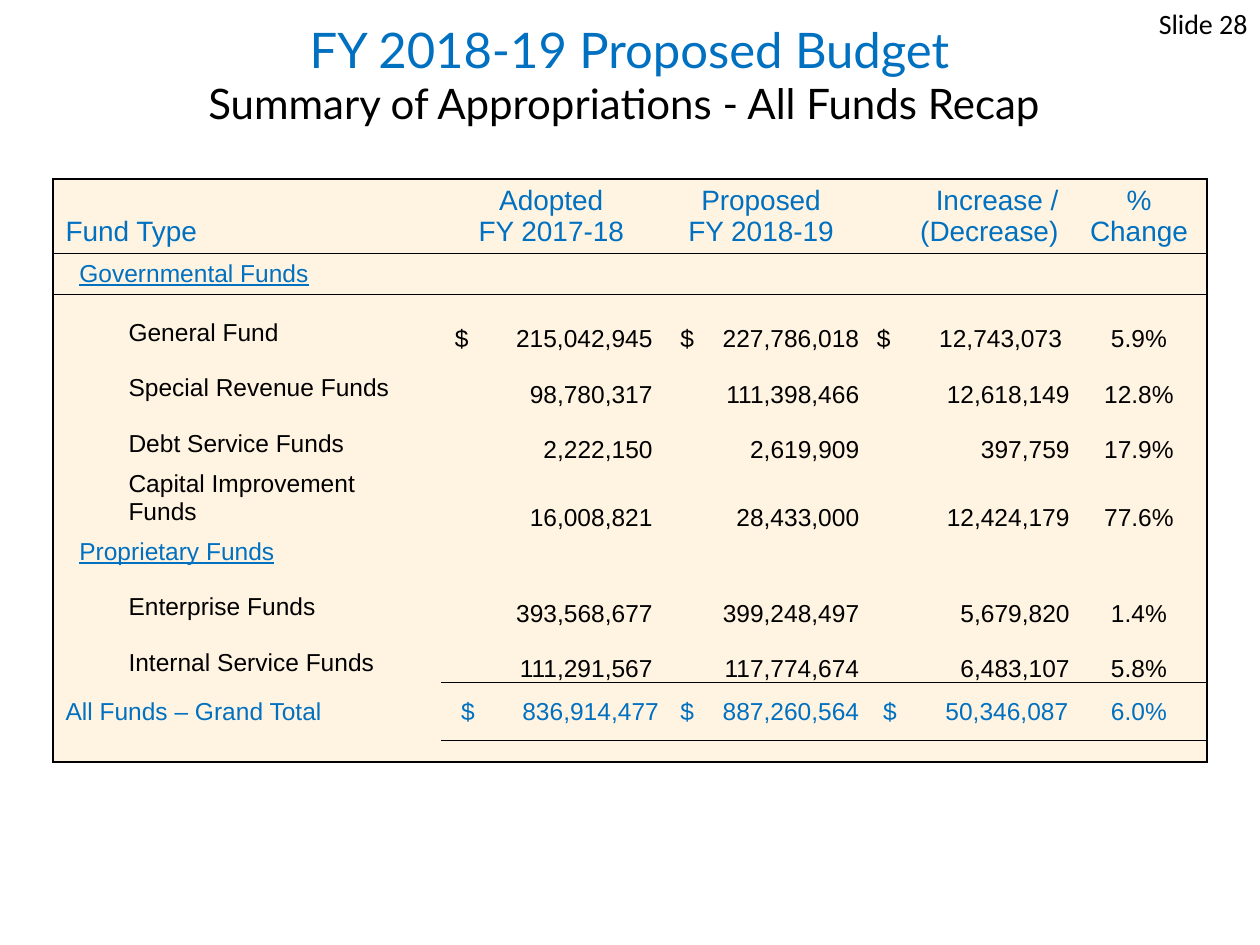
"""Build the proposed budget slide with the all funds recap table."""
from lxml import etree
from pptx import Presentation
from pptx.dml.color import RGBColor
from pptx.enum.text import MSO_ANCHOR, MSO_AUTO_SIZE, PP_ALIGN
from pptx.oxml.ns import qn
from pptx.util import Inches, Pt

LEFT, CENTER, RIGHT = PP_ALIGN.LEFT, PP_ALIGN.CENTER, PP_ALIGN.RIGHT
BOTTOM, MIDDLE = MSO_ANCHOR.BOTTOM, MSO_ANCHOR.MIDDLE
BLUE, BLACK, CREAM = "0070C0", "000000", "FFF3E1"
NO_STYLE = "{2D5ABB26-0587-4C30-8999-92F81FD0307C}"

COLUMN_WIDTHS = [0.5, 2.58, 1.75, 1.58, 1.67, 1.08]
ROW_HEIGHTS = [0.42, 0.25, 0.47, 0.44, 0.44, 0.44, 0.18, 0.44, 0.44, 0.46, 0.17]
HEADER, TOTAL, LAST = 0, 9, 10
SECTIONS = [1, 6]
MERGED = [HEADER, *SECTIONS, TOTAL, LAST]
ROWS = [
    ["Fund Type", "", "Adopted\nFY 2017-18", "Proposed\nFY 2018-19", "Increase / (Decrease)", "%\nChange"],
    ["Governmental Funds", "", "", "", "", ""],
    ["", "General Fund", "$\t215,042,945", "$\t227,786,018", "$\t12,743,073", "5.9%"],
    ["", "Special Revenue Funds", "98,780,317", "111,398,466", "12,618,149", "12.8%"],
    ["", "Debt Service Funds", "2,222,150", "2,619,909", "397,759", "17.9%"],
    ["", "Capital Improvement Funds", "16,008,821", "28,433,000", "12,424,179", "77.6%"],
    ["Proprietary Funds", "", "", "", "", ""],
    ["", "Enterprise Funds", "393,568,677", "399,248,497", "5,679,820", "1.4%"],
    ["", "Internal Service Funds", "111,291,567", "117,774,674", "6,483,107", "5.8%"],
    ["All Funds – Grand Total", "", "$\t836,914,477", "$\t887,260,564", "$\t50,346,087", "6.0%"],
    ["", "", "", "", "", ""],
]
DOLLAR_TABS = {2: 1.57, 3: 1.42, 4: 1.47}
DOLLAR_MARGINS = {2: 0.11, 3: 0.15, 4: 0.13}


def color(value):
    return RGBColor.from_string(value)


def add_border(cell, side, width):
    line = etree.SubElement(cell._tc.get_or_add_tcPr(), qn(f"a:ln{side}"), w=str(Pt(width)))
    fill = etree.SubElement(line, qn("a:solidFill"))
    etree.SubElement(fill, qn("a:srgbClr"), val=BLACK)


presentation = Presentation()
presentation.slide_width, presentation.slide_height = Inches(10), Inches(7.5)
slide = presentation.slides.add_slide(presentation.slide_layouts[5])

title = slide.shapes.title
title.left, title.top, title.width, title.height = Inches(0.33), Inches(0.25), Inches(9.33), Inches(0.67)
title.text_frame.auto_size = MSO_AUTO_SIZE.NONE
title.text_frame.vertical_anchor = MIDDLE
paragraph = title.text_frame.paragraphs[0]
paragraph.alignment = CENTER
for text, size, tint in [("FY 2018-19 Proposed Budget", 28, BLUE),
                         ("Summary of Appropriations - All Funds Recap ", 24, BLACK)]:
    if paragraph.runs:
        paragraph.add_line_break()
    run = paragraph.add_run()
    run.text = text
    run.font.name, run.font.size, run.font.color.rgb = "Lato", Pt(size), color(tint)

table = slide.shapes.add_table(len(ROW_HEIGHTS), len(COLUMN_WIDTHS), Inches(0.42), Inches(1.42),
                               Inches(sum(COLUMN_WIDTHS)), Inches(sum(ROW_HEIGHTS))).table
table.first_row = table.horz_banding = False
table._tbl.tblPr.find(qn("a:tableStyleId")).text = NO_STYLE
for column, width in zip(table.columns, COLUMN_WIDTHS):
    column.width = Inches(width)
for row, height in zip(table.rows, ROW_HEIGHTS):
    row.height = Inches(height)
for row_index in MERGED:
    table.cell(row_index, 0).merge(table.cell(row_index, 1))

for row_index, texts in enumerate(ROWS):
    for column_index, text in enumerate(texts):
        cell = table.cell(row_index, column_index)
        is_amount = column_index >= 2
        thin_below = [HEADER, TOTAL - 1, TOTAL] if is_amount else [HEADER]
        if column_index == 0:
            add_border(cell, "L", 1)
        if column_index == 5:
            add_border(cell, "R", 1)
        if row_index == HEADER or row_index - 1 in thin_below:
            add_border(cell, "T", 1 if row_index == HEADER else 0.5)
        if row_index == LAST or row_index in thin_below:
            add_border(cell, "B", 1 if row_index == LAST else 0.5)
        cell.fill.solid()
        cell.fill.fore_color.rgb = color(CREAM)
        cell.vertical_anchor = MIDDLE if row_index == TOTAL else BOTTOM
        if not text:
            cell.margin_top = cell.margin_bottom = 0
            etree.SubElement(cell.text_frame.paragraphs[0]._p, qn("a:endParaRPr"), sz="600")
            continue

        cell.text = text
        alignment = LEFT
        if is_amount:
            alignment = RIGHT if column_index == 4 else CENTER
        if row_index in SECTIONS:
            cell.margin_left = Inches(0.21)
        if is_amount and row_index != HEADER:
            cell.margin_left = cell.margin_right = cell.margin_top = Inches(0.01)
            cell.margin_bottom = 0
            if "\t" in text:
                alignment = LEFT
                shift = 0.05 if row_index == TOTAL and column_index != 3 else 0
                cell.margin_left = Inches(DOLLAR_MARGINS[column_index] + shift)
                cell.margin_right = 0
                properties = cell.text_frame.paragraphs[0]._p.get_or_add_pPr()
                tabs = etree.SubElement(properties, qn("a:tabLst"))
                etree.SubElement(tabs, qn("a:tab"), pos=str(Inches(DOLLAR_TABS[column_index])), algn="r")
            elif column_index < 5:
                alignment = RIGHT
                cell.margin_right = Inches(0.07 if column_index == 2 else 0.01)
        for paragraph in cell.text_frame.paragraphs:
            paragraph.alignment = alignment
            font = paragraph.font
            font.name = "Arial"
            font.size = Pt(16 if row_index == HEADER else 14)
            font.underline = row_index in SECTIONS
            font.color.rgb = color(BLUE if row_index in MERGED else BLACK)

slide_label = slide.shapes.add_textbox(Inches(7.67), 0, Inches(2.33), Inches(0.5))
slide_label.text_frame.word_wrap = True
slide_label.text_frame.text = "Slide 28"
paragraph = slide_label.text_frame.paragraphs[0]
paragraph.alignment = RIGHT
paragraph.font.name, paragraph.font.size = "Calibri", Pt(16)
paragraph.font.color.rgb = color(BLACK)

presentation.save("out.pptx")
